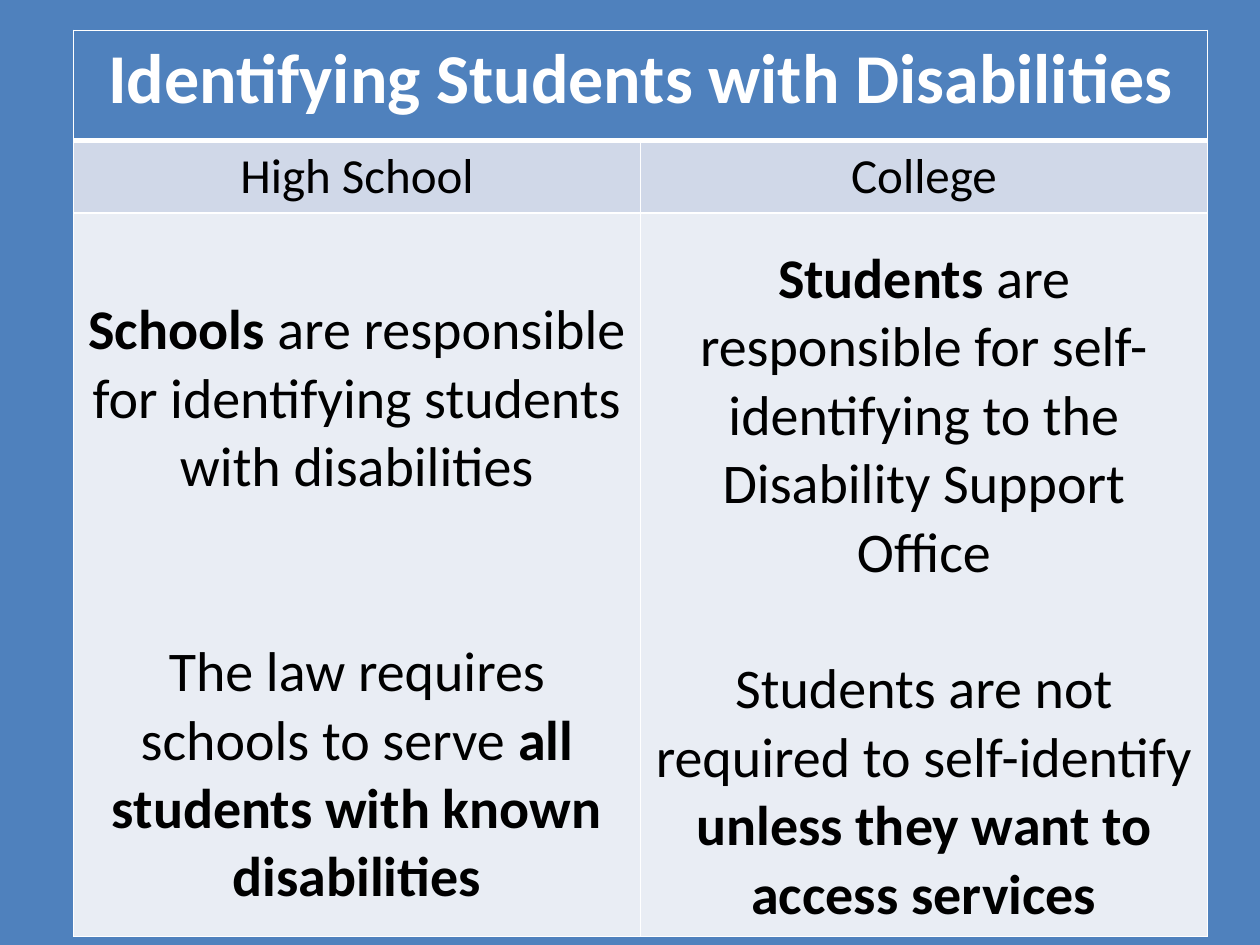
from lxml import etree
from pptx import Presentation
from pptx.dml.color import RGBColor
from pptx.enum.text import PP_ALIGN
from pptx.oxml.ns import qn
from pptx.util import Pt

CENTER = PP_ALIGN.CENTER
BLUE = RGBColor(0x4F, 0x81, 0xBD)
HEADING_FILL = RGBColor(0xD0, 0xD8, 0xE8)
BODY_FILL = RGBColor(0xE9, 0xED, 0xF4)
WHITE = RGBColor(0xFF, 0xFF, 0xFF)
BLACK = RGBColor(0x00, 0x00, 0x00)
FONT = "Calibri"


def style_cell(cell, fill, widths):
    properties = cell._tc.get_or_add_tcPr()
    for side, width in zip("LRTB", widths):
        line = etree.SubElement(properties, qn(f"a:ln{side}"), w=str(Pt(width)))
        solid = etree.SubElement(line, qn("a:solidFill"))
        etree.SubElement(solid, qn("a:srgbClr"), val=str(WHITE))
    cell.fill.solid()
    cell.fill.fore_color.rgb = fill


def add_runs(paragraph, parts, size, color):
    paragraph.alignment = CENTER
    for text, bold in parts:
        run = paragraph.add_run()
        run.text = text
        run.font.name = FONT
        run.font.size = Pt(size)
        run.font.bold = bold
        run.font.color.rgb = color


presentation = Presentation()
presentation.slide_width = Pt(720)
presentation.slide_height = Pt(540)
slide = presentation.slides.add_slide(presentation.slide_layouts[6])
slide.background.fill.solid()
slide.background.fill.fore_color.rgb = BLUE

table = slide.shapes.add_table(3, 2, Pt(42), Pt(17.3), Pt(648), Pt(518)).table
for column in table.columns:
    column.width = Pt(324)
for row, height in zip(table.rows, (63, 41.5, 413.5)):
    row.height = Pt(height)

row_styles = [
    (BLUE, (1, 1, 1, 3)),
    (HEADING_FILL, (1, 1, 3, 1)),
    (BODY_FILL, (1, 1, 1, 1)),
]
for row, (fill, widths) in zip(table.rows, row_styles):
    for cell in row.cells:
        style_cell(cell, fill, widths)

title_cell = table.cell(0, 0)
title_cell.merge(table.cell(0, 1))
add_runs(title_cell.text_frame.paragraphs[0],
         [("Identifying Students with Disabilities", True)], 40, WHITE)

columns = [
    ("High School", 47.6, 78, [
        [("Schools", True),
         (" are responsible for identifying students with disabilities", False)],
        [("The law requires schools to serve ", False),
         ("all students with known disabilities", True)],
    ]),
    ("College", 18.2, 39, [
        [("Students", True),
         (" are responsible for self-identifying to the Disability Support Office", False)],
        [("Students are not required to self-identify ", False),
         ("unless they want to access services", True)],
    ]),
]
for index, (heading, top_margin, gap, statements) in enumerate(columns):
    heading_cell = table.cell(1, index)
    add_runs(heading_cell.text_frame.paragraphs[0], [(heading, False)], 28, BLACK)

    body_cell = table.cell(2, index)
    body_cell.margin_top = Pt(top_margin)
    text_frame = body_cell.text_frame
    add_runs(text_frame.paragraphs[0], statements[0], 32, BLACK)
    paragraph = text_frame.add_paragraph()
    paragraph.space_before = Pt(gap)
    add_runs(paragraph, statements[1], 32, BLACK)

presentation.save("out.pptx")
